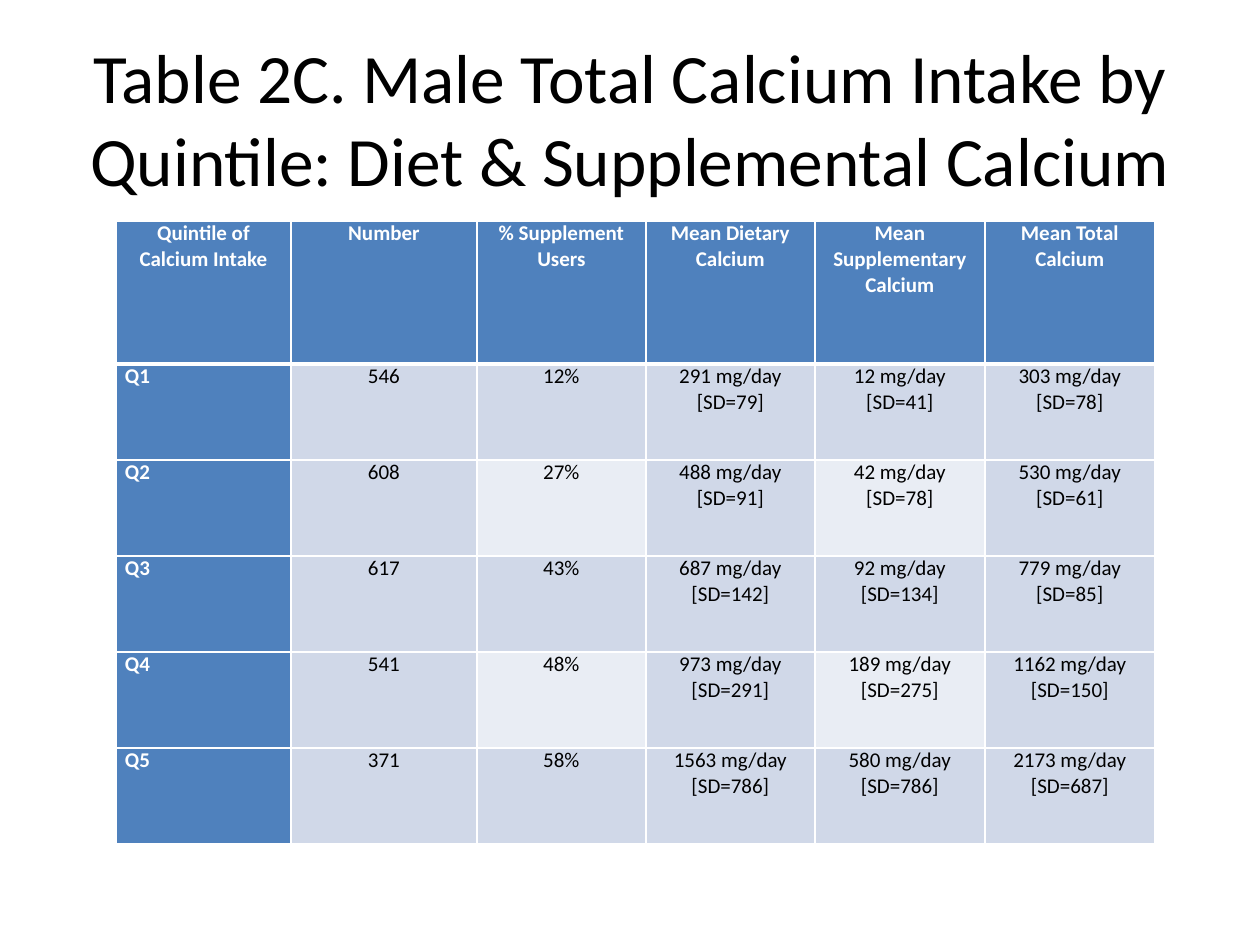
import pptx
import pptx.util
import pptx.dml.color
import pptx.enum.text
import pptx.oxml.ns
from lxml import etree

TITLE = "Table 2C. Male Total Calcium Intake by Quintile: Diet & Supplemental Calcium"
HEADS = ["Quintile of Calcium Intake", "Number", "% Supplement Users",
         "Mean Dietary Calcium", "Mean Supplementary Calcium", "Mean Total Calcium"]
DATA = [
    ("Q1", 546, 12, (291, 79), (12, 41), (303, 78)),
    ("Q2", 608, 27, (488, 91), (42, 78), (530, 61)),
    ("Q3", 617, 43, (687, 142), (92, 134), (779, 85)),
    ("Q4", 541, 48, (973, 291), (189, 275), (1162, 150)),
    ("Q5", 371, 58, (1563, 786), (580, 786), (2173, 687)),
]
COLS = [175, 186, 169, 169, 170, 170]
ROWS = [143] + [96] * len(DATA)
COLORS = {"head": "4F81BD", "band": "D0D8E8", "pale": "E9EDF4",
          "text": "000000", "white": "FFFFFF"}
FONT = "Calibri"
ALIGN = pptx.enum.text.PP_ALIGN


def px(n):
    return pptx.util.Emu(round(n * 914400 / 126))


def color(name):
    return pptx.dml.color.RGBColor.from_string(COLORS[name])


def write(frame, lines, size, tint, bold=False, align=ALIGN.CENTER):
    for i, line in enumerate(lines):
        para = frame.paragraphs[0] if i == 0 else frame.add_paragraph()
        para.alignment = align
        run = para.add_run()
        run.text = line
        run.font.name = FONT
        run.font.size = pptx.util.Pt(size)
        run.font.bold = bold
        run.font.color.rgb = color(tint)


def border(cell, side, width):
    qn = pptx.oxml.ns.qn
    props = cell._tc.get_or_add_tcPr()
    line = etree.SubElement(props, qn("a:ln" + side), w=str(pptx.util.Pt(width)))
    fill = etree.SubElement(line, qn("a:solidFill"))
    etree.SubElement(fill, qn("a:srgbClr"), val=COLORS["white"])


def style(cell, row, col):
    cell.margin_left = cell.margin_right = px(9)
    cell.margin_top = cell.margin_bottom = 0
    for side in "LRTB":
        thick = (row, side) in [(0, "B"), (1, "T")]
        border(cell, side, 3 if thick else 1)
    if row == 0 or col == 0:
        tint = "head"
    else:
        tint = "pale" if row % 2 == 0 and col in (2, 4) else "band"
    cell.fill.solid()
    cell.fill.fore_color.rgb = color(tint)


def main():
    deck = pptx.Presentation()
    deck.slide_width, deck.slide_height = px(1260), px(945)
    slide = deck.slides.add_slide(deck.slide_layouts[6])

    frame = slide.shapes.add_textbox(px(63), px(38), px(1134), px(158)).text_frame
    frame.word_wrap = True
    frame.vertical_anchor = pptx.enum.text.MSO_ANCHOR.MIDDLE
    write(frame, [TITLE], 39.6, "text")

    body = [[[name], [str(count)], [f"{share}%"]]
            + [[f"{mean} mg/day", f"[SD={dev}]"] for mean, dev in means]
            for name, count, share, *means in DATA]
    grid = [[[head] for head in HEADS]] + body
    table = slide.shapes.add_table(len(ROWS), len(COLS), px(116), px(221),
                                   px(sum(COLS)), px(sum(ROWS))).table
    table.horz_banding = False
    for col, width in zip(table.columns, COLS):
        col.width = px(width)
    for row, height in zip(table.rows, ROWS):
        row.height = px(height)
    for r, row in enumerate(grid):
        for c, lines in enumerate(row):
            cell = table.cell(r, c)
            style(cell, r, c)
            head = r == 0 or c == 0
            align = ALIGN.LEFT if r and c == 0 else ALIGN.CENTER
            write(cell.text_frame, lines, 12, "white" if head else "text", head, align)

    deck.save("out.pptx")


if __name__ == "__main__":
    main()
